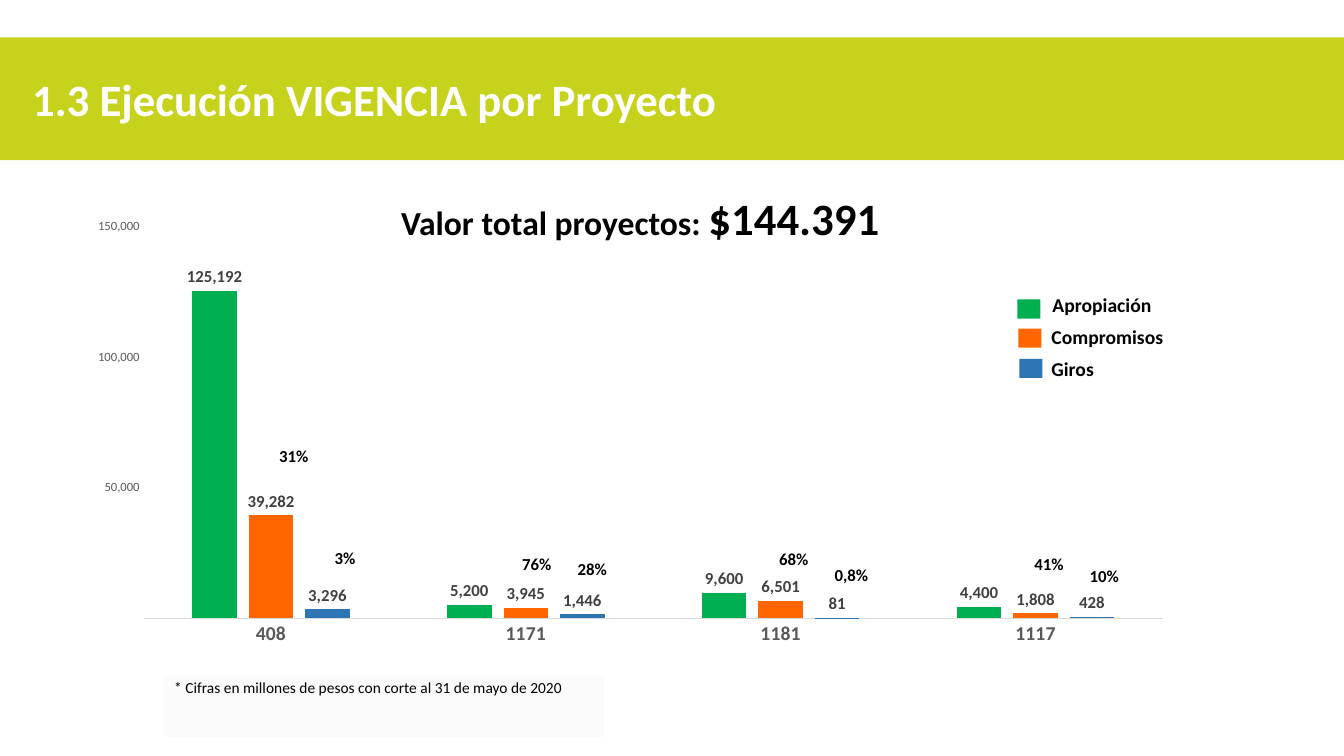
"""Build the slide on budget execution by project."""
from lxml import etree
from pptx import Presentation
from pptx.chart.data import CategoryChartData
from pptx.dml.color import RGBColor
from pptx.enum.chart import XL_CHART_TYPE, XL_LABEL_POSITION, XL_TICK_MARK
from pptx.enum.shapes import MSO_SHAPE
from pptx.enum.text import MSO_ANCHOR, PP_ALIGN
from pptx.oxml import parse_xml
from pptx.oxml.ns import nsdecls, qn
from pptx.util import Inches, Pt

COLUMNS = XL_CHART_TYPE.COLUMN_CLUSTERED
OUTSIDE = XL_LABEL_POSITION.OUTSIDE_END
NO_TICK = XL_TICK_MARK.NONE
RECTANGLE = MSO_SHAPE.RECTANGLE
TOP = MSO_ANCHOR.TOP
JUSTIFY = PP_ALIGN.JUSTIFY

FONT = "Calibri"
MILLION = 1_000_000
MILLIONS_FORMAT = "#,###,,"
COLORS = {
    "banner": "C7D21C", "white": "FFFFFF", "black": "000000",
    "green": "00B050", "orange": "FF6600", "blue": "2E75B6",
    "axis_text": "595959", "label_text": "404040", "axis_line": "D9D9D9",
    "note": "F8F8F8",
}
TITLE = "1.3 Ejecución VIGENCIA por Proyecto"
TOTAL = [("Valor total proyectos: ", 24), ("$144.391", 32)]
NOTE = "* Cifras en millones de pesos con corte al 31 de mayo de 2020"
PROJECTS = ["408", "1171", "1181", "1117"]
SERIES = [
    ("Apropiación", "green", (125192, 5200, 9600, 4400)),
    ("Compromisos", "orange", (39282, 3945, 6501, 1808)),
    ("Giros", "blue", (3296, 1446, 81, 428)),
]
LEGEND = [
    (10.09, 2.97, 10.34, 2.86, 1.21),
    (10.1, 3.26, 10.33, 3.17, 1.45),
    (10.11, 3.56, 10.33, 3.49, 0.9),
]
PERCENTAGES = [
    ("31%", 2.67, 4.37, 0.6), ("3%", 3.22, 5.38, 0.74),
    ("76%", 5.08, 5.44, 0.78), ("28%", 5.63, 5.49, 0.51),
    ("68%", 7.63, 5.39, 0.6), ("0,8%", 8.18, 5.55, 0.69),
    ("41%", 10.16, 5.44, 0.6), ("10%", 10.71, 5.56, 0.6),
]
PLOT_AREA = {"x": 0.061, "y": 0.019, "w": 0.915, "h": 0.88}


def rgb(name):
    return RGBColor.from_string(COLORS[name])


def set_font(font, size, color, bold=False):
    font.name = FONT
    font.size = Pt(size)
    font.bold = bold
    font.color.rgb = rgb(color)


def add_box(slide, left, top, width, height, color):
    shape = slide.shapes.add_shape(
        RECTANGLE, Inches(left), Inches(top), Inches(width), Inches(height))
    shape.shadow.inherit = False
    shape.fill.solid()
    shape.fill.fore_color.rgb = rgb(color)
    shape.line.fill.background()
    return shape


def add_text(slide, left, top, width, height, runs, color="black"):
    box = slide.shapes.add_textbox(
        Inches(left), Inches(top), Inches(width), Inches(height))
    box.text_frame.word_wrap = True
    paragraph = box.text_frame.paragraphs[0]
    set_font(paragraph.font, runs[0][1], color, True)
    for text, size in runs:
        run = paragraph.add_run()
        run.text = text
        if len(runs) > 1:
            run.font.size = Pt(size)


def add_project_chart(slide):
    data = CategoryChartData(number_format=MILLIONS_FORMAT)
    data.categories = PROJECTS
    for name, color, millions in SERIES:
        data.add_series(name, [value * MILLION for value in millions])
    chart = slide.shapes.add_chart(
        COLUMNS, Inches(0.75), Inches(2.16), Inches(11.05), Inches(4.42),
        data).chart
    chart.has_legend = False
    chart.has_title = False
    set_font(chart.font, 10, "black")

    plot = chart.plots[0]
    plot.gap_width = 219
    plot.overlap = -27
    plot.vary_by_categories = False
    for series, (name, color, millions) in zip(plot.series, SERIES):
        series.format.fill.solid()
        series.format.fill.fore_color.rgb = rgb(color)
        series.invert_if_negative = False
        labels = series.data_labels
        labels.show_value = True
        labels.position = OUTSIDE
        labels.number_format = MILLIONS_FORMAT
        labels.number_format_is_linked = False
        set_font(labels.font, 12, "label_text", True)

    projects, amounts = chart.category_axis, chart.value_axis
    for axis in (projects, amounts):
        axis.major_tick_mark = NO_TICK
        axis.minor_tick_mark = NO_TICK
        axis.has_major_gridlines = False
    set_font(projects.tick_labels.font, 14, "axis_text", True)
    projects.format.line.color.rgb = rgb("axis_line")
    projects.format.line.width = Pt(0.75)
    set_font(amounts.tick_labels.font, 9, "axis_text")
    amounts.tick_labels.number_format = MILLIONS_FORMAT
    amounts.tick_labels.number_format_is_linked = False
    amounts.format.line.fill.background()
    amounts.minimum_scale = 0
    amounts.maximum_scale = 150000 * MILLION
    amounts.major_unit = 50000 * MILLION

    plot_area = chart.element.find(".//" + qn("c:plotArea"))
    for layout in plot_area.findall(qn("c:layout")):
        plot_area.remove(layout)
    settings = [("layoutTarget", "inner"), ("xMode", "edge"), ("yMode", "edge")]
    settings += PLOT_AREA.items()
    items = "".join(f'<c:{tag} val="{value}"/>' for tag, value in settings)
    plot_area.insert(0, parse_xml(
        f'<c:layout {nsdecls("c")}><c:manualLayout>{items}'
        "</c:manualLayout></c:layout>"))


def add_note(slide):
    note = add_box(slide, 1.63, 6.7, 4.36, 0.61, "note")
    color = note.fill._xPr.find(".//" + qn("a:srgbClr"))
    etree.SubElement(color, qn("a:alpha")).set("val", "46000")
    note.text_frame.word_wrap = True
    note.text_frame.vertical_anchor = TOP
    paragraph = note.text_frame.paragraphs[0]
    paragraph.text = NOTE
    paragraph.alignment = JUSTIFY
    paragraph.line_spacing = 0.9
    set_font(paragraph.font, 11, "black")


def main():
    presentation = Presentation()
    presentation.slide_width = Inches(13.33)
    presentation.slide_height = Inches(7.5)
    slide = presentation.slides.add_slide(presentation.slide_layouts[6])

    add_box(slide, 0, 0.37, 13.33, 1.22, "banner")
    add_text(slide, 0.22, 0.66, 12.26, 0.64, [(TITLE, 32)], "white")
    add_project_chart(slide)
    for (name, color, millions), place in zip(SERIES, LEGEND):
        key_left, key_top, left, top, width = place
        add_box(slide, key_left, key_top, 0.23, 0.19, color)
        add_text(slide, left, top, width, 0.34, [(name, 14)])
    for text, left, top, width in PERCENTAGES:
        add_text(slide, left, top, width, 0.3, [(text, 12)])
    add_text(slide, 3.88, 1.84, 5.58, 1.04, TOTAL)
    add_note(slide)
    presentation.save("out.pptx")


if __name__ == "__main__":
    main()
